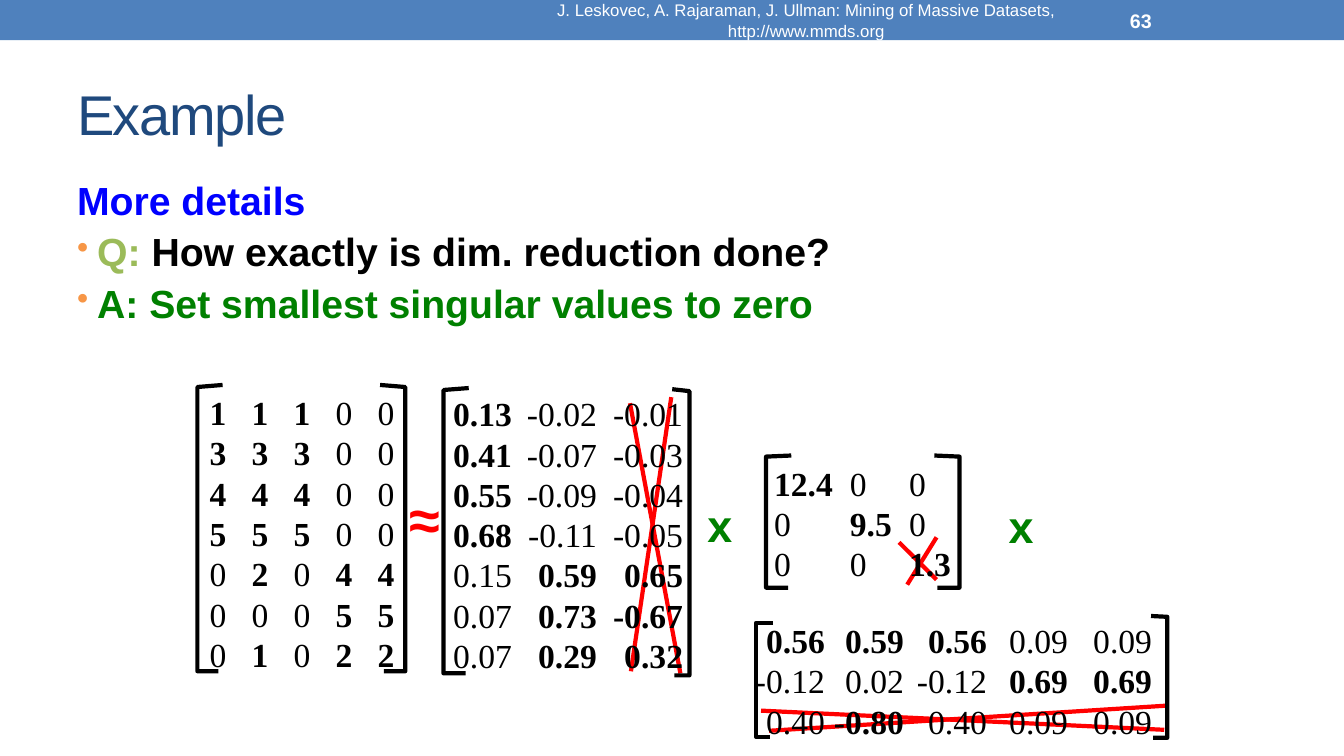
from dataclasses import dataclass
from typing import Any, NamedTuple

from lxml import etree
from pptx import Presentation
from pptx import util as u
from pptx.dml import color
from pptx.enum import shapes, text
from pptx.oxml import ns

Pt = u.Pt


@dataclass(frozen=True)
class Theme:
    banner: str = "4F81BD"
    title: str = "1F497D"
    lead: str = "0000FF"
    question: str = "9BBB59"
    answer: str = "008000"
    bullet: str = "F79646"
    ink: str = "000000"
    paper: str = "FFFFFF"
    strike: str = "FF0000"
    sans: str = "Arial"
    serif: str = "Times New Roman"
    title_size: float = 40
    body_size: float = 28
    entry_size: float = 24
    times_size: float = 32
    approx_size: float = 40
    credit_size: float = 12
    number_size: float = 14
    stroke: float = 3


THEME = Theme()


class Span(NamedTuple):
    words: str
    colour: str
    size: float
    bold: bool = False
    font: str = THEME.sans


class Box(NamedTuple):
    left: float
    top: float
    width: float
    height: float


class Strike(NamedTuple):
    x1: float
    y1: float
    x2: float
    y2: float


class Bracket(NamedTuple):
    tip_top: float
    tip_y: float
    side: float
    top: float
    bottom: float
    tip_bottom: float


class Matrix(NamedTuple):
    """Rows of entries; a leading * marks a bold entry."""
    box: Box
    align: str
    stops: list[float]
    rows: list[str]


class Label(NamedTuple):
    box: Box
    span: Span
    align: Any = text.PP_ALIGN.LEFT
    inset: float = 7.2


def rgb(value: str) -> color.RGBColor:
    return color.RGBColor.from_string(value)


def new_frame(slide, box: Box, anchor=text.MSO_ANCHOR.TOP, inset: float = 7.2):
    frame = slide.shapes.add_textbox(*map(Pt, box)).text_frame
    frame.word_wrap = True
    frame.vertical_anchor = anchor
    frame.margin_left = frame.margin_right = Pt(inset)
    return frame


def next_paragraph(frame, index: int):
    return frame.add_paragraph() if index else frame.paragraphs[0]


def add_span(paragraph, span: Span):
    run = paragraph.add_run()
    run.text = span.words
    run.font.name, run.font.size, run.font.bold = span.font, Pt(span.size), span.bold
    run.font.color.rgb = rgb(span.colour)
    return run


def add_label(slide, label: Label):
    frame = new_frame(slide, label.box, text.MSO_ANCHOR.MIDDLE, label.inset)
    paragraph = frame.paragraphs[0]
    paragraph.alignment = label.align
    return add_span(paragraph, label.span)


def add_body(slide, box: Box, lines: list[list[Span]]) -> None:
    frame = new_frame(slide, box)
    for index, spans in enumerate(lines):
        paragraph = next_paragraph(frame, index)
        paragraph.line_spacing = 0.9
        paragraph.space_before = Pt(6.5)
        for span in spans:
            add_span(paragraph, span)
        props = paragraph._p.get_or_add_pPr()
        props.set("marL", str(Pt(14.4)))
        props.set("indent", str(Pt(-14.4)))
        if index:  # the lead line has no bullet
            tint = etree.SubElement(props, ns.qn("a:buClr"))
            etree.SubElement(tint, ns.qn("a:srgbClr"), val=THEME.bullet)
            etree.SubElement(props, ns.qn("a:buSzPct"), val="85000")
            etree.SubElement(props, ns.qn("a:buChar"), char="•")


def add_matrix(slide, matrix: Matrix) -> None:
    frame = new_frame(slide, matrix.box, inset=0)
    frame.margin_top = Pt(5)
    for index, row in enumerate(matrix.rows):
        paragraph = next_paragraph(frame, index)
        paragraph.line_spacing = Pt(28.8)
        stops = etree.SubElement(paragraph._p.get_or_add_pPr(), ns.qn("a:tabLst"))
        for stop in matrix.stops:
            etree.SubElement(stops, ns.qn("a:tab"),
                             pos=str(Pt(stop - matrix.box.left)), algn=matrix.align)
        for entry in row.split():
            add_span(paragraph, Span("\t" + entry.lstrip("*"), THEME.ink, THEME.entry_size,
                                     entry.startswith("*"), THEME.serif))


def add_strike(slide, strike: Strike) -> None:
    line = slide.shapes.add_connector(shapes.MSO_CONNECTOR.STRAIGHT, *map(Pt, strike))
    line.line.color.rgb = rgb(THEME.strike)
    line.line.width = Pt(THEME.stroke)
    etree.SubElement(line._element.spPr, ns.qn("a:effectLst"))


def add_bracket(slide, b: Bracket) -> None:
    builder = slide.shapes.build_freeform(Pt(b.tip_top), Pt(b.tip_y))
    corners = [(b.side, b.top), (b.side, b.bottom), (b.tip_bottom, b.bottom)]
    builder.add_line_segments([(Pt(x), Pt(y)) for x, y in corners], close=False)
    outline = builder.convert_to_shape()
    outline.shadow.inherit = False
    outline.fill.background()
    outline.line.color.rgb = rgb(THEME.ink)
    outline.line.width = Pt(THEME.stroke)


TITLE = Label(Box(48, 42, 864, 78), Span("Example", THEME.title, THEME.title_size))
CREDIT = Label(Box(360, 1.5, 432, 26), Span(
    "J. Leskovec, A. Rajaraman, J. Ullman: Mining of Massive Datasets, http://www.mmds.org",
    THEME.paper, THEME.credit_size), text.PP_ALIGN.CENTER)
NUMBER = Label(Box(800, 1.5, 112, 26), Span("63", THEME.paper, THEME.number_size, True))
TIMES = Span("x", THEME.answer, THEME.times_size, True)
APPROX = Span("≈", THEME.strike, THEME.approx_size, True)
OPERATORS = [
    Label(Box(498, 352, 32.4, 46), TIMES, text.PP_ALIGN.CENTER, 0),
    Label(Box(713.2, 352.6, 32.4, 46), TIMES, text.PP_ALIGN.CENTER, 0),
    Label(Box(285, 342.6, 36.6, 55.4), APPROX, text.PP_ALIGN.CENTER, 0),
]
BODY = [
    [Span("More details", THEME.lead, THEME.body_size, True)],
    [Span("Q:", THEME.question, THEME.body_size, True),
     Span(" How exactly is dim. reduction done?", THEME.ink, THEME.body_size, True)],
    [Span("A: Set smallest singular values to zero", THEME.answer, THEME.body_size, True)],
]
STRIKES = [
    Strike(648, 417.6, 669, 383.8), Strike(642.2, 387.4, 669, 414),
    Strike(450.7, 479.5, 479.5, 283.7), Strike(450, 288, 486, 481),
    Strike(831.6, 521.3, 543.6, 507.6), Strike(549.4, 522, 833.8, 504),
]
BRACKETS = [
    Bracket(159, 275, 141, 276.5, 479.5, 156), Bracket(271.5, 275, 289.5, 276.5, 479.5, 274.3),
    Bracket(334.8, 277.2, 316.8, 278.6, 481, 332.6),
    Bracket(480.2, 278, 492.5, 279.4, 482.4, 481.7),
    Bracket(565.2, 325.4, 547.2, 326.2, 419.8, 563),
    Bracket(667.4, 325.4, 685.4, 326.2, 419.8, 669.6),
    Bracket(552.2, 445, 540, 445, 526.3, 550), Bracket(822.2, 440, 833.8, 440.6, 527, 823.7),
]
MATRICES = [
    Matrix(Box(138, 275, 156, 211), "ctr", [155.7 + 30 * column for column in range(5)],
           ["*1 *1 *1 0 0", "*3 *3 *3 0 0", "*4 *4 *4 0 0", "*5 *5 *5 0 0",
            "0 *2 0 *4 *4", "0 0 0 *5 *5", "0 *1 0 *2 *2"]),
    Matrix(Box(546, 325.4, 156, 94.3), "l", [552.9, 607.1, 649.3],
           ["*12.4 0 0", "0 *9.5 0", "0 0 *1.3"]),
    Matrix(Box(306.7, 275.8, 198, 211), "r", [365.7, 426.4, 487.9],
           ["*0.13 -0.02 -0.01", "*0.41 -0.07 -0.03", "*0.55 -0.09 -0.04", "*0.68 -0.11 -0.05",
            "0.15 *0.59 *0.65", "0.07 *0.73 *-0.67", "0.07 *0.29 *0.32"]),
    Matrix(Box(534.2, 437.8, 306, 94.3), "r", [589.3, 645.7, 705, 762.9, 822.9],
           ["*0.56 *0.59 *0.56 0.09 0.09", "-0.12 0.02 -0.12 *0.69 *0.69",
            "0.40 *-0.80 0.40 0.09 0.09"]),
]


def main() -> None:
    deck = Presentation()
    deck.slide_width, deck.slide_height = Pt(960), Pt(540)
    slide = deck.slides.add_slide(deck.slide_layouts[6])

    # Banner with credit and slide number
    banner = slide.shapes.add_shape(shapes.MSO_SHAPE.RECTANGLE, 0, 0, Pt(960), Pt(28.8))
    banner.shadow.inherit = False
    banner.fill.solid()
    banner.fill.fore_color.rgb = rgb(THEME.banner)
    banner.line.fill.background()
    add_label(slide, CREDIT)
    add_label(slide, NUMBER)

    # Title and question
    heading = add_label(slide, TITLE)
    heading._r.get_or_add_rPr().set("spc", "-100")
    add_body(slide, Box(48, 126, 864, 384), BODY)

    # Decomposition: dropped parts, brackets, operators, entries
    for strike in STRIKES:
        add_strike(slide, strike)
    for bracket in BRACKETS:
        add_bracket(slide, bracket)
    for operator in OPERATORS:
        add_label(slide, operator)
    for matrix in MATRICES:
        add_matrix(slide, matrix)

    deck.save("out.pptx")


if __name__ == "__main__":
    main()
